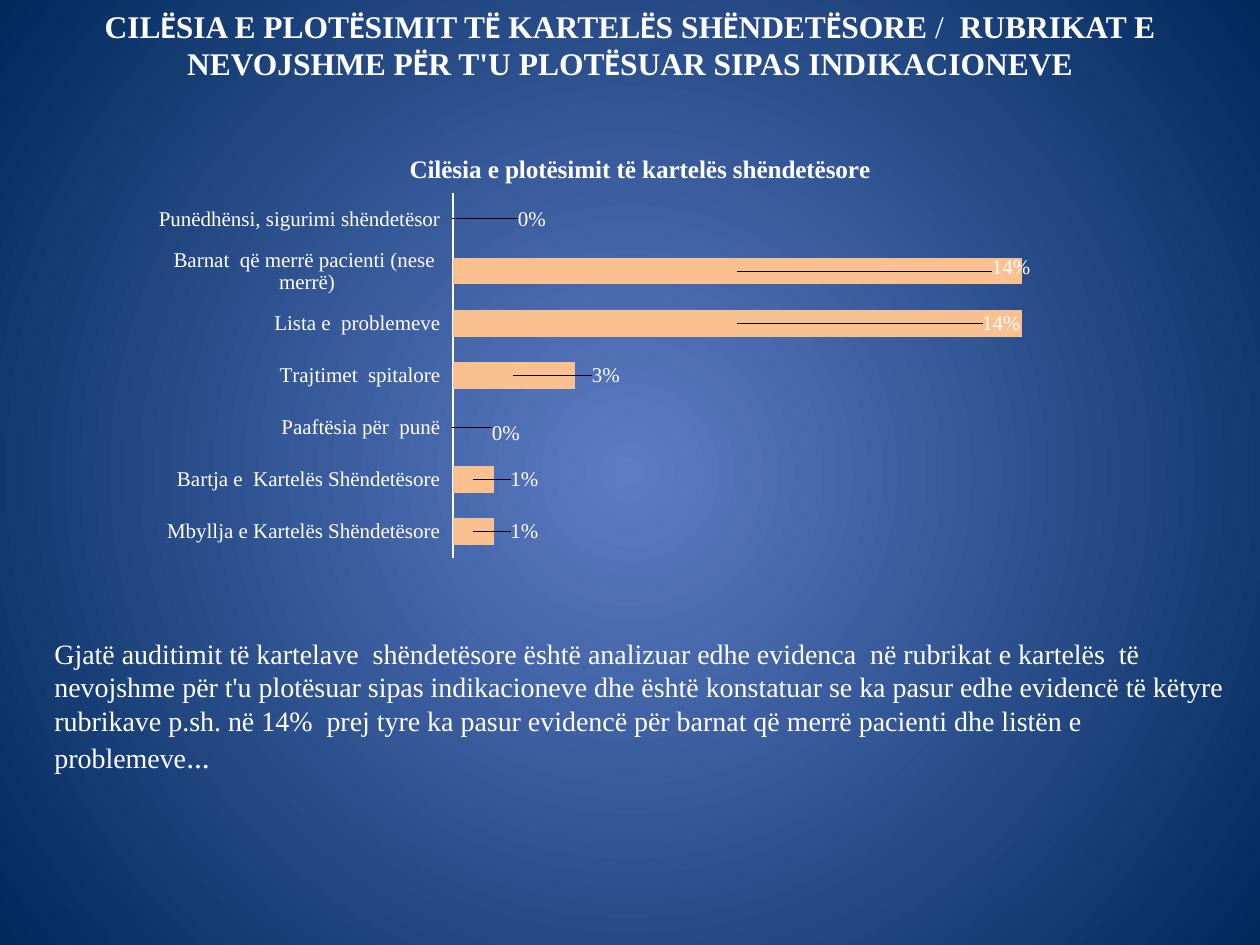
from dataclasses import dataclass
from itertools import groupby

from lxml.etree import SubElement
from pptx import Presentation
from pptx.chart.data import CategoryChartData as ChartData
from pptx.dml.color import RGBColor as RGB
from pptx.enum.chart import XL_CHART_TYPE as ChartType
from pptx.enum.chart import XL_LABEL_POSITION as LabelPos
from pptx.enum.chart import XL_TICK_LABEL_POSITION as TickLabels
from pptx.enum.chart import XL_TICK_MARK as Tick
from pptx.enum.text import MSO_ANCHOR as Anchor
from pptx.enum.text import MSO_AUTO_SIZE as AutoSize
from pptx.enum.text import PP_ALIGN as Align
from pptx.oxml import parse_xml
from pptx.oxml.ns import nsdecls, qn
from pptx.util import Pt

PX = 914400 // 126  # EMU per px


@dataclass(frozen=True)
class Theme:
    glow: RGB = RGB(0x5E, 0x7C, 0xC5)
    navy: RGB = RGB(0x00, 0x29, 0x5C)
    text: RGB = RGB(0xFF, 0xFF, 0xFF)
    bar: RGB = RGB(0xFA, 0xC0, 0x8F)
    font: str = "Times New Roman"
    accent_font: str = "Calibri"
    heading: float = 18
    body: float = 16
    chart_title: float = 14.4
    chart_text: float = 12


THEME = Theme()

# Category, share, label shift from the bar's middle in px (bottom to top)
RUBRICS = [
    ("Mbyllja e Kartelës Shëndetësore", 0.01, 51, 0),
    ("Bartja e  Kartelës Shëndetësore", 0.01, 51, 0),
    ("Paaftësia për  punë", 0, 53, 6),
    ("Trajtimet  spitalore", 0.03, 92, 0),
    ("Lista e  problemeve", 0.14, 264, 0),
    ("Barnat  që merrë pacienti (nese  merrë)", 0.14, 274, -4),
    ("Punëdhënsi, sigurimi shëndetësor", 0, 79, 0),
]


def style(font, size, bold=False, name=THEME.font):
    font.size, font.bold, font.name = Pt(size), bold, name
    font.color.rgb = THEME.text


def add_text(slide, box, runs, align=Align.LEFT, anchor=Anchor.TOP):
    """Place one paragraph; runs are (text, format) pairs."""
    frame = slide.shapes.add_textbox(*(v * PX for v in box)).text_frame
    frame.word_wrap = True
    frame.auto_size = AutoSize.SHAPE_TO_FIT_TEXT
    frame.vertical_anchor = anchor
    paragraph = frame.paragraphs[0]
    paragraph.alignment = align
    for text, look in runs:
        run = paragraph.add_run()
        run.text = text
        style(run.font, **look)


def manual_layout(box, inner=False, **places):
    """Chart layout from px places, as fractions of the chart box."""
    spans = {"x": box[2], "y": box[3], "w": box[2], "h": box[3]}
    layout = parse_xml(f"<c:layout {nsdecls('c')}><c:manualLayout/></c:layout>")
    manual = layout[0]
    if inner:
        SubElement(manual, qn("c:layoutTarget"), val="inner")
    if inner or "edge" in places:
        for mode in ("xMode", "yMode"):
            SubElement(manual, qn(f"c:{mode}"), val="edge")
    for key, span in spans.items():
        if key in places:
            SubElement(manual, qn(f"c:{key}"), val=f"{places[key] / span:.4f}")
    return layout


def replace_layout(parent, layout, after):
    for old in parent.findall(qn("c:layout")):
        parent.remove(old)
    if after is None:
        parent.insert(0, layout)
    else:
        after.addnext(layout)


def paint_background(slide):
    fill = slide.background.fill
    fill.gradient()
    for stop, color, place in zip(fill.gradient_stops, (THEME.glow, THEME.navy), (0, 1)):
        stop.color.rgb = color
        stop.position = place
    gradient = slide.element.find(".//" + qn("a:gradFill"))
    for line in gradient.findall(qn("a:lin")):
        gradient.remove(line)
    gradient.find(qn("a:gsLst")).addnext(parse_xml(
        f'<a:path {nsdecls("a")} path="circle">'
        '<a:fillToRect l="50000" t="50000" r="50000" b="50000"/></a:path>'))


def add_heading(slide, box):
    parts = [
        ("CILËSIA E PLOTËSIMIT TË KARTELËS SHËNDETËSORE ", True),
        ("/  ", False),
        ("RUBRIKAT E NEVOJSHME PËR T'U PLOTËSUAR SIPAS INDIKACIONEVE", True),
    ]
    runs = []
    for text, bold in parts:
        for accented, letters in groupby(text, lambda letter: letter == "Ë"):
            name = THEME.accent_font if accented else THEME.font
            runs.append(("".join(letters),
                         dict(size=THEME.heading, bold=bold, name=name)))
    add_text(slide, box, runs, align=Align.CENTER, anchor=Anchor.MIDDLE)


def add_rubric_chart(slide, box):
    data = ChartData(number_format="0%")
    data.categories = [rubric[0] for rubric in RUBRICS]
    data.add_series("Series 1", [rubric[1] for rubric in RUBRICS])
    chart = slide.shapes.add_chart(
        ChartType.BAR_STACKED, *(v * PX for v in box), data).chart
    style(chart.font, THEME.chart_text)
    chart.has_legend = False

    # Title
    chart.has_title = True
    title = chart.chart_title
    title.include_in_layout = False
    title_run = title.text_frame.paragraphs[0].add_run()
    title_run.text = "Cilësia e plotësimit të kartelës shëndetësore"
    style(title_run.font, THEME.chart_title, bold=True)
    title_xml = chart.element.find(".//" + qn("c:title"))
    replace_layout(title_xml, manual_layout(box, edge=True, x=258, y=23),
                   title_xml.find(qn("c:tx")))

    # Axes
    rubric_axis, share_axis = chart.category_axis, chart.value_axis
    rubric_axis.major_tick_mark = rubric_axis.minor_tick_mark = Tick.NONE
    rubric_axis.tick_label_position = TickLabels.LOW
    rubric_axis.format.line.color.rgb = THEME.text
    rubric_axis.format.line.width = Pt(0.75)
    share_axis.minimum_scale, share_axis.maximum_scale = 0, 0.16
    share_axis.has_major_gridlines = False
    share_axis.visible = False

    # Bars
    plot = chart.plots[0]
    plot.gap_width, plot.overlap = 95, 100
    plot.vary_by_categories = False
    shares = plot.series[0]
    shares.format.fill.solid()
    shares.format.fill.fore_color.rgb = THEME.bar
    plot_area = chart.element.find(".//" + qn("c:plotArea"))
    replace_layout(plot_area, manual_layout(box, inner=True, x=306, y=67, w=650, h=365), None)

    # Value labels, each shifted from the middle of its bar
    labels = shares.data_labels
    labels.show_value = True
    labels.number_format, labels.number_format_is_linked = "0%", False
    style(labels.font, THEME.chart_text)
    for index, (_, _, shift_x, shift_y) in enumerate(RUBRICS):
        label = shares.points[index].data_label
        style(label.font, THEME.chart_text)
        label.position = LabelPos.CENTER
    for label_xml, rubric in zip(chart.element.iter(qn("c:dLbl")), RUBRICS):
        layout = manual_layout(box, x=rubric[2], y=rubric[3])
        replace_layout(label_xml, layout, label_xml.find(qn("c:idx")))
        layout.addnext(parse_xml(
            f'<c:numFmt {nsdecls("c")} formatCode="0%" sourceLinked="0"/>'))


def add_finding(slide, box):
    finding = (
        "Gjatë auditimit të kartelave  shëndetësore është analizuar edhe evidenca  "
        "në rubrikat e kartelës  të nevojshme për t'u plotësuar sipas indikacioneve "
        "dhe është konstatuar se ka pasur edhe evidencë të këtyre rubrikave p.sh. "
        "në 14%  prej tyre ka pasur evidencë për barnat që merrë pacienti dhe "
        "listën e  problemeve")
    add_text(slide, box, [(finding, dict(size=THEME.body)),
                          ("...", dict(size=THEME.heading))])


def main():
    deck = Presentation()
    deck.slide_width, deck.slide_height = 1260 * PX, 945 * PX
    slide = deck.slides.add_slide(deck.slide_layouts[6])
    paint_background(slide)
    add_heading(slide, (0, 0, 1260, 89))
    add_rubric_chart(slide, (147, 126, 976, 441))
    add_finding(slide, (42, 630, 1218, 152))
    deck.save("out.pptx")


if __name__ == "__main__":
    main()
